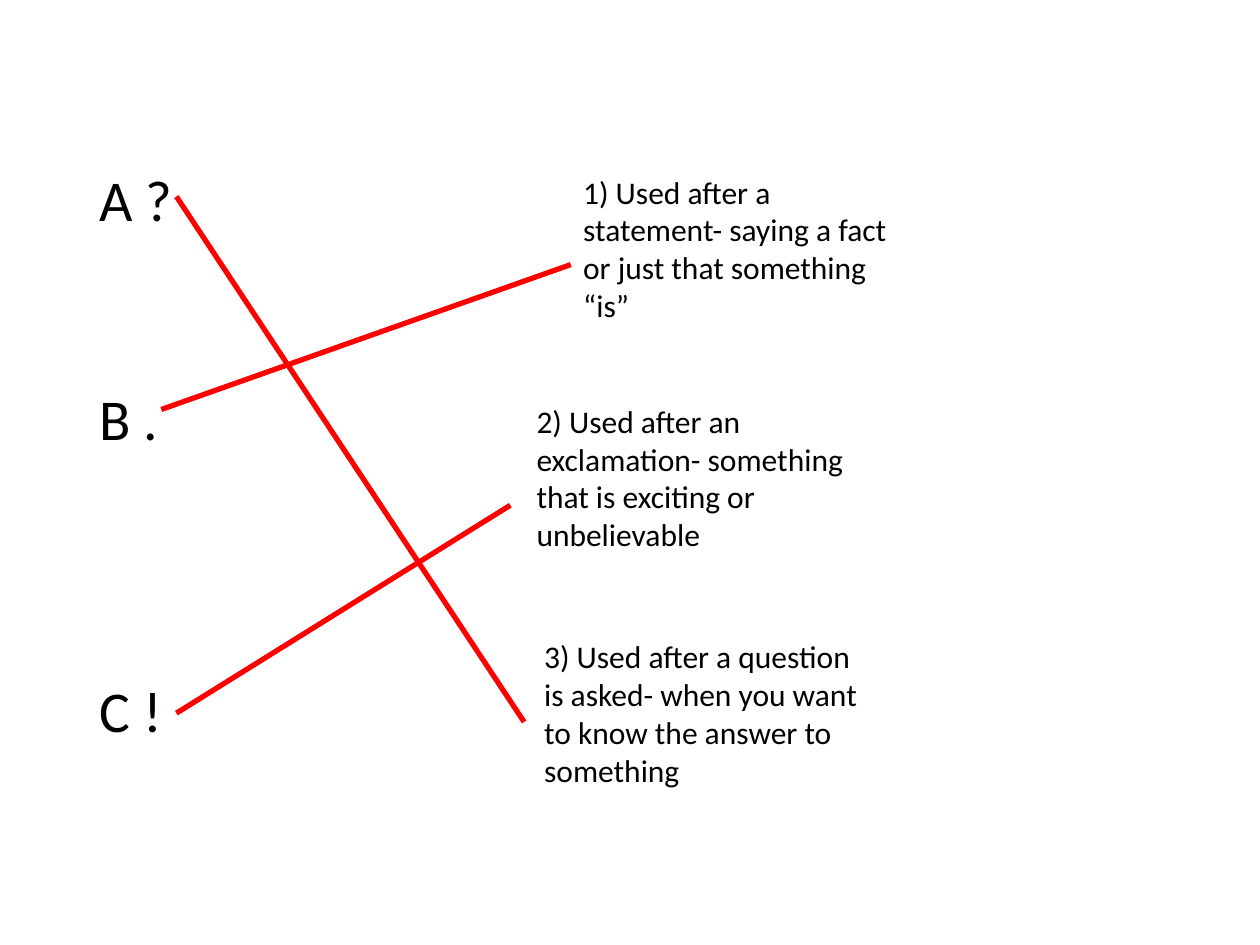
from lxml import etree
from pptx import Presentation
from pptx.dml.color import RGBColor
from pptx.enum.shapes import MSO_CONNECTOR
from pptx.oxml.ns import qn
from pptx.util import Inches, Pt

STRAIGHT = MSO_CONNECTOR.STRAIGHT
FONT, BLACK, RED = "Calibri", "000000", "FF0000"

# Punctuation marks, each with the number of empty rows above it
MARKS = [("A ?", 0), ("B .", 2), ("C !", 3)]
MARK_ROW, MARK_GAP = 41.7, 10  # points

# Meanings: text, left, top
MEANINGS = [
    ("1) Used after a statement- saying a fact or just that something “is”", 4.53, 1.32),
    ("2) Used after an exclamation- something that is exciting or unbelievable", 4.16, 3.14),
    ("3) Used after a question is asked- when you want to know the answer to something", 4.22, 5.01),
]

# Answer lines: start at the mark, end at its meaning
ANSWERS = [
    ((1.4, 1.56), (4.16, 5.73)),
    ((1.28, 3.25), (4.53, 2.1)),
    ((1.4, 5.66), (4.05, 4.01)),
]


def color(value):
    return RGBColor.from_string(value)


def add_text(slide, lines, left, top, width, height, size):
    frame = slide.shapes.add_textbox(
        Inches(left), Inches(top), Inches(width), Inches(height)).text_frame
    frame.word_wrap = True
    frame.text = "\n".join(lines)
    for paragraph in frame.paragraphs:
        font = paragraph.runs[0].font
        font.name, font.size = FONT, Pt(size)
        font.color.rgb = color(BLACK)
    return frame.paragraphs


def add_answer(slide, start, end):
    answer = slide.shapes.add_connector(
        STRAIGHT, *(Inches(value) for value in start + end))
    answer.line.color.rgb = color(RED)
    answer.line.width = Pt(3)
    etree.SubElement(answer._element.spPr, qn("a:effectLst"))


def main():
    deck = Presentation()
    deck.slide_width, deck.slide_height = Inches(10), Inches(7.5)
    slide = deck.slides.add_slide(deck.slide_layouts[6])

    # Marks in one column, spaced by their empty rows
    marks = add_text(slide, [mark for mark, _ in MARKS], 0.69, 1.36, 8.62, 4.64, 33)
    for paragraph, (_, empty_rows) in zip(marks, MARKS):
        paragraph.line_spacing = 0.8
        if empty_rows:
            paragraph.space_before = Pt(MARK_GAP + empty_rows * MARK_ROW)

    # Meanings on the right
    for meaning, left, top in MEANINGS:
        add_text(slide, [meaning], left, top, 2.78, 1.31, 18)

    # Lines that match marks with meanings
    for start, end in ANSWERS:
        add_answer(slide, start, end)

    deck.save("out.pptx")


if __name__ == "__main__":
    main()
